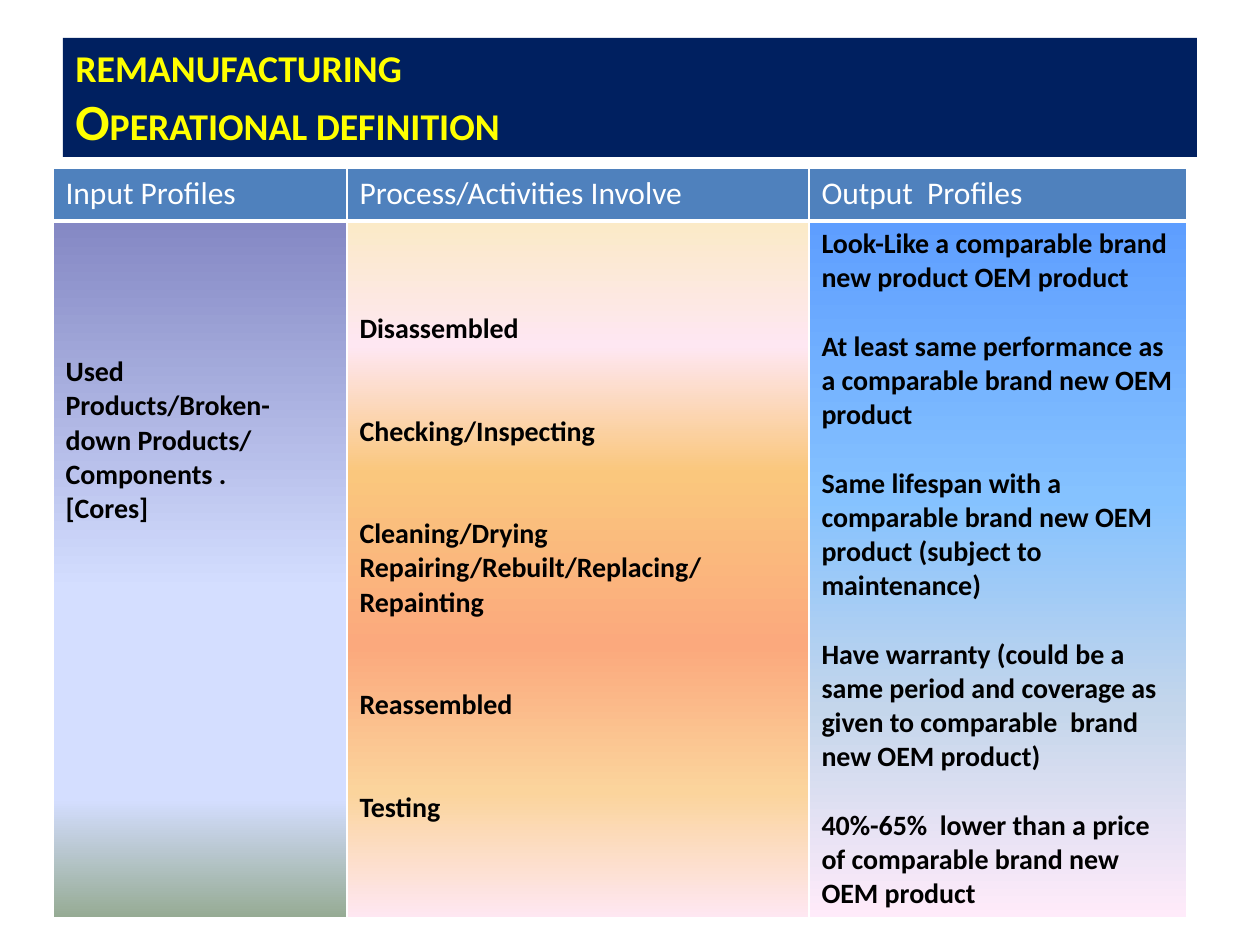
import pptx
import pptx.util
import pptx.dml.color
import pptx.enum.shapes
import pptx.enum.text
import pptx.oxml
import pptx.oxml.ns

PX = 914400 / 126
LINE = 19.5  # points taken by one line of 16 pt text
INK = {"navy": "002060", "yellow": "FFFF00", "head": "4F81BD",
       "white": "FFFFFF", "black": "000000"}

# Gradients: position in percent, colour
FADES = [
    [(0, "8488C4"), (53, "D4DEFF"), (83, "D4DEFF"), (100, "96AB94")],
    [(0, "FBEAC7"), (18, "FEE7F2"), (36, "FAC77D"), (61, "FBA97D"),
     (82, "FBD49C"), (100, "FEE7F2")],
    [(0, "5E9EFF"), (40, "85C2FF"), (70, "C4D6EB"), (100, "FFEBFA")],
]
HEADS = ["Input Profiles", "Process/Activities Involve", "Output  Profiles"]

# Column text: groups of lines, set apart by a gap
INPUT = [["Used Products/Broken-down Products/", "Components .", "[Cores]"]]
STEPS = [["Disassembled"], ["Checking/Inspecting"],
         ["Cleaning/Drying", "Repairing/Rebuilt/Replacing/", "Repainting"],
         ["Reassembled"], ["Testing"]]
OUTPUT = [["Look-Like a comparable brand new product OEM product"],
          ["At least same performance as a comparable brand new OEM product"],
          ["Same lifespan with a comparable brand new OEM product "
           "(subject to maintenance)"],
          ["Have warranty (could be a same period and coverage as given to "
           "comparable  brand new OEM product)"],
          ["40%-65%  lower than a price of comparable brand new OEM product"]]


def px(num):
    return pptx.util.Emu(round(num * PX))


def rgb(code):
    return pptx.dml.color.RGBColor.from_string(code)


class Deck:
    font = "Calibri"

    def __init__(self, wide, high):
        self.prs = pptx.Presentation()
        self.prs.slide_width, self.prs.slide_height = px(wide), px(high)
        self.slide = self.prs.slides.add_slide(self.prs.slide_layouts[6])

    def style(self, run, size, ink, bold=False):
        run.font.name, run.font.size = self.font, pptx.util.Pt(size)
        run.font.bold, run.font.color.rgb = bold, rgb(INK[ink])

    def banner(self, box, top, cap, rest):
        shape = self.slide.shapes.add_shape(
            pptx.enum.shapes.MSO_SHAPE.RECTANGLE, *map(px, box))
        shape.shadow.inherit = False
        shape.fill.solid()
        shape.fill.fore_color.rgb = rgb(INK["navy"])
        shape.line.fill.background()
        frame = shape.text_frame
        frame.word_wrap = True
        frame.vertical_anchor = pptx.enum.text.MSO_ANCHOR.MIDDLE
        para = frame.paragraphs[0]
        para.text = f"{top}\v{cap}"
        para.add_run().text = rest
        para.alignment = pptx.enum.text.PP_ALIGN.LEFT
        for run, size in zip(para.runs, (21.6, 29, 21.6)):
            self.style(run, size, "yellow", True)

    def table(self, left, top, cols, rows):
        grid = self.slide.shapes.add_table(
            len(rows), len(cols), px(left), px(top),
            px(sum(cols)), px(sum(rows))).table
        for col, wide in zip(grid.columns, cols):
            col.width = px(wide)
        for row, high in zip(grid.rows, rows):
            row.height = px(high)
        return grid

    def head(self, cell, text):
        cell.text_frame.text = text
        self.style(cell.text_frame.paragraphs[0].runs[0], 18, "white")
        cell.fill.solid()
        cell.fill.fore_color.rgb = rgb(INK["head"])
        self.edge(cell, 3)

    def body(self, cell, groups, fade, inset, gap):
        frame = cell.text_frame
        frame.text = "\n".join("\n".join(group) for group in groups)
        paras = iter(frame.paragraphs)
        for num, group in enumerate(groups):
            for pos, _ in enumerate(group):
                para = next(paras)
                self.style(para.runs[0], 16, "black", True)
                if num and not pos:
                    para.space_before = pptx.util.Pt(gap)
        cell.margin_top = px(inset)
        self.fade(cell, fade)
        self.edge(cell, 1)

    def fade(self, cell, stops):
        cell.fill.gradient()
        cell.fill.gradient_angle = 270  # top to bottom
        tag = pptx.oxml.ns.qn("a:gsLst")
        inner = next(cell._tc.tcPr.iter(tag))
        for old in list(inner):
            inner.remove(old)
        for pos, code in stops:
            inner.append(pptx.oxml.parse_xml(
                f'<a:gs {pptx.oxml.ns.nsdecls("a")} pos="{pos * 1000}">'
                f'<a:srgbClr val="{code}"/></a:gs>'))

    def edge(self, cell, base):
        for num, side in enumerate("LRTB"):
            wide = pptx.util.Pt(base if side == "B" else 1)
            cell._tc.tcPr.insert(num, pptx.oxml.parse_xml(
                f'<a:ln{side} {pptx.oxml.ns.nsdecls("a")} w="{wide}">'
                f'<a:solidFill><a:srgbClr val="{INK["white"]}"/></a:solidFill>'
                f'</a:ln{side}>'))


def main():
    deck = Deck(1260, 945)

    # Title band
    deck.banner((63, 38, 1134, 119),
                "REMANUFACTURING", "O", "PERATIONAL DEFINITION")

    # Profile table
    grid = deck.table(53, 168, (294, 462, 378), (53, 696))
    for num, text in enumerate(HEADS):
        deck.head(grid.cell(0, num), text)
    parts = [(INPUT, 134, 0), (STEPS, 91, 2 * LINE), (OUTPUT, 6, LINE)]
    for num, (groups, inset, gap) in enumerate(parts):
        deck.body(grid.cell(1, num), groups, FADES[num], inset, gap)

    deck.prs.save("out.pptx")


if __name__ == "__main__":
    main()
